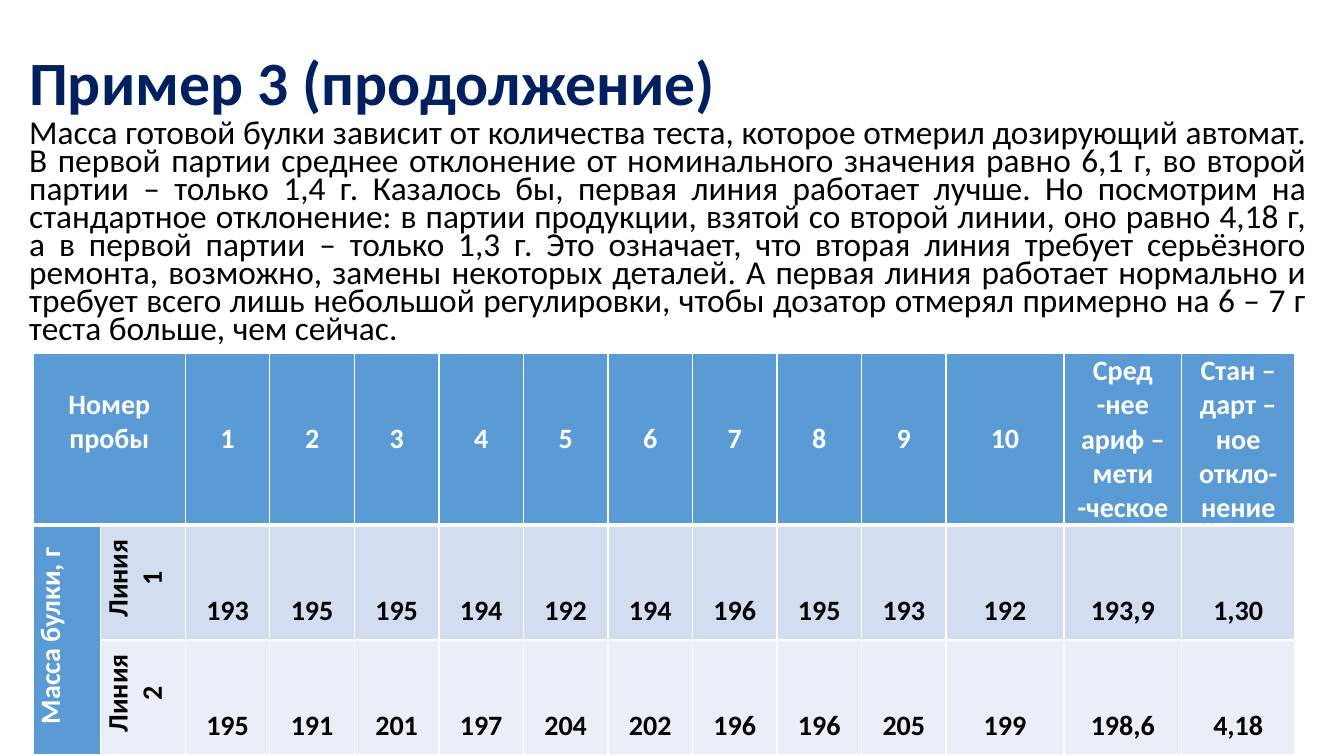
import pptx
import pptx.util
import pptx.dml.color
import pptx.enum.text
import pptx.oxml

Pt = pptx.util.Pt
ALIGN = pptx.enum.text.PP_ALIGN
ANCHOR = pptx.enum.text.MSO_ANCHOR
BLUE, WHITE, BLACK = "5B9BD5", "FFFFFF", "000000"
LINE = 24.4


def style(para, size, color, bold, align):
    para.alignment = align
    for run in para.runs:
        run.font.name = "Calibri"
        run.font.size = Pt(size)
        run.font.bold = bold
        run.font.color.rgb = pptx.dml.color.RGBColor.from_string(color)


def border(cell, side, width):
    """Draw a white line on one side: L, R, T or B."""
    ns = "http://schemas.openxmlformats.org/drawingml/2006/main"
    line = pptx.oxml.parse_xml(
        f'<a:ln{side} xmlns:a="{ns}" w="{Pt(width)}"><a:solidFill>'
        f'<a:srgbClr val="{WHITE}"/></a:solidFill></a:ln{side}>')
    props = cell._tc.get_or_add_tcPr()
    props.insert("LRTB".index(side), line)


deck = pptx.Presentation()
deck.slide_width, deck.slide_height = Pt(960), Pt(540)
slide = deck.slides.add_slide(deck.slide_layouts[1])

title = slide.shapes.title
title.left, title.top, title.width, title.height = Pt(13.7), Pt(8.6), Pt(828), Pt(104.4)
title.text_frame.text = "Пример 3 (продолжение)"
title.text_frame.vertical_anchor = ANCHOR.MIDDLE
title.text_frame.paragraphs[0].line_spacing = 0.9
style(title.text_frame.paragraphs[0], 44, "002060", True, ALIGN.LEFT)

body = slide.placeholders[1]
body.left, body.top, body.width, body.height = Pt(13.7), Pt(83.5), Pt(926), Pt(169.2)
body.text_frame.text = (
    "Масса готовой булки зависит от количества теста, которое отмерил дозирующий автомат. "
    "В первой партии среднее отклонение от номинального значения равно 6,1 г, во второй "
    "партии – только 1,4 г. Казалось бы, первая линия работает лучше. Но посмотрим на "
    "стандартное отклонение: в партии продукции, взятой со второй линии, оно равно 4,18 г, "
    "а в первой партии – только 1,3 г. Это означает, что вторая линия требует серьёзного "
    "ремонта, возможно, замены некоторых деталей. А первая линия работает нормально и "
    "требует всего лишь небольшой регулировки, чтобы дозатор отмерял примерно на 6 – 7 г "
    "теста больше, чем сейчас.")
body.text_frame.auto_size = pptx.enum.text.MSO_AUTO_SIZE.NONE
para = body.text_frame.paragraphs[0]
props = para._p.get_or_add_pPr()
props.set("marL", "0")
props.set("indent", "0")
props.append(pptx.oxml.parse_xml(
    '<a:buNone xmlns:a="http://schemas.openxmlformats.org/drawingml/2006/main"/>'))
para.line_spacing = 0.7
para.space_before = Pt(0)
style(para, 23.8, BLACK, False, ALIGN.JUSTIFY)

heads = ["Номер пробы", ""] + [str(n) for n in range(1, 11)] + [
    "Сред -нее ариф –мети -ческое", "Стан –\nдарт –\nное\nоткло- нение"]
rows = [
    heads,
    ["Масса булки, г", "Линия 1"] + "193 195 195 194 192 194 196 195 193 192 193,9 1,30".split(),
    ["", "Линия 2"] + "195 191 201 197 204 202 196 196 205 199 198,6 4,18".split()]
widths = [48.2] + [60.4] * 10 + [84.2, 84.2, 80.6]
heights = [122, 82, 82]
fills = [BLUE, "D2DEEF", "EAEFF7"]

frame = slide.shapes.add_table(3, 14, Pt(23.8), Pt(252.7), Pt(sum(widths)), Pt(sum(heights)))
table = frame.table
for col, width in zip(table.columns, widths):
    col.width = Pt(width)
for row, height in zip(table.rows, heights):
    row.height = Pt(height)
table.cell(0, 0).merge(table.cell(0, 1))
table.cell(1, 0).merge(table.cell(2, 0))

for r, row in enumerate(rows):
    for c, text in enumerate(row):
        cell = table.cell(r, c)
        side = r > 0 and c < 2
        blue = r == 0 or c == 0
        cell.fill.solid()
        cell.fill.fore_color.rgb = pptx.dml.color.RGBColor.from_string(BLUE if blue else fills[r])
        cell.margin_left = cell.margin_right = Pt(5)
        cell.margin_top = cell.margin_bottom = Pt(0)
        if r == 0 and c == 0:
            cell.margin_top = Pt(LINE)
        elif not side and not (r == 0 and c > 11):
            cell.margin_top = Pt(2 * LINE)
        for edge in "LRTB":
            border(cell, edge, 3 if (r, edge) in [(0, "B"), (1, "T")] else 1)
        if text:
            cell.text_frame.text = text
        for para in cell.text_frame.paragraphs:
            style(para, 20, WHITE if blue else BLACK, True, ALIGN.CENTER)
            if side:
                para._p.get_or_add_pPr().set("marL", str(Pt(6)))
        if side:
            cell._tc.get_or_add_tcPr().set("vert", "vert270")

deck.save("out.pptx")
